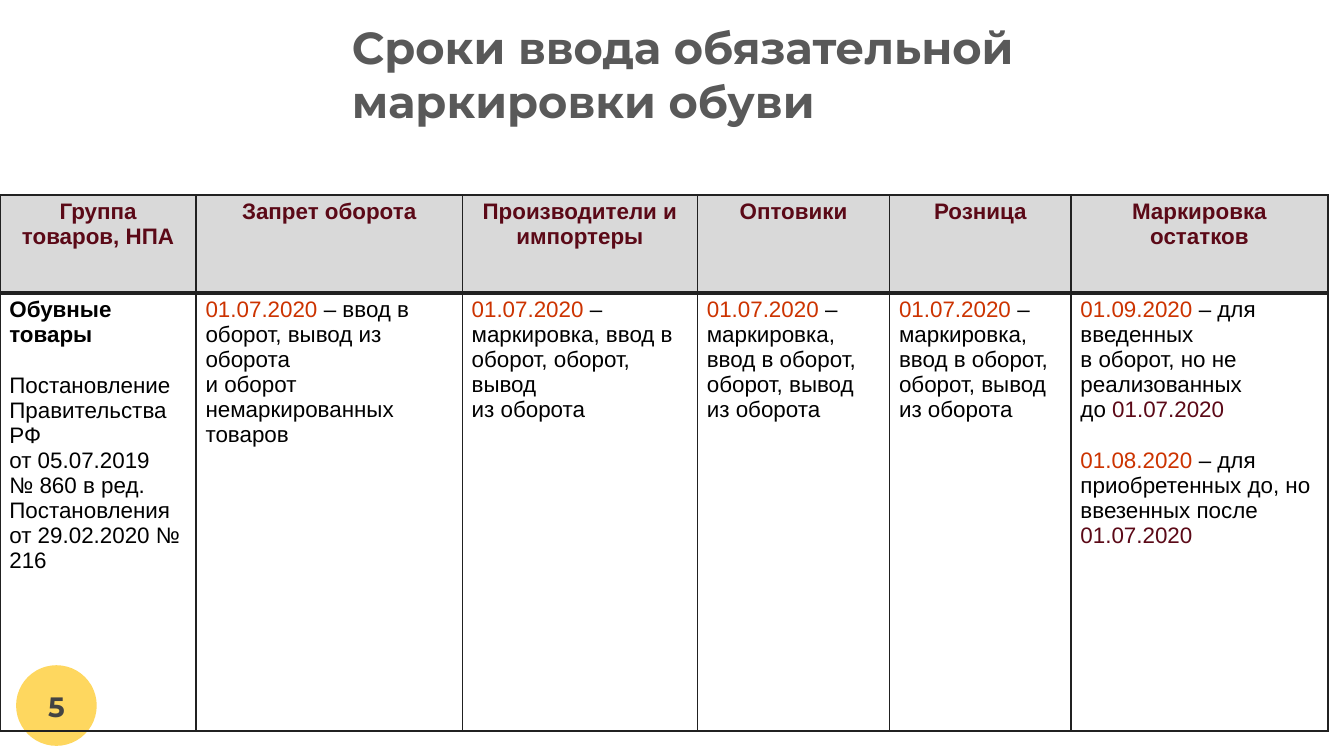
import pptx
import pptx.dml.color
import pptx.enum.shapes
import pptx.enum.text
import pptx.oxml
import pptx.oxml.ns
import pptx.util
from pptx.util import Inches

RGBColor = pptx.dml.color.RGBColor
YELLOW = RGBColor(0xFE, 0xD7, 0x5F)
HEADER_GRAY = RGBColor(0xD9, 0xD9, 0xD9)
TITLE_GRAY = RGBColor(0x59, 0x59, 0x59)
NUMBER_GRAY = RGBColor(0x43, 0x43, 0x43)
BORDER = RGBColor(0x21, 0x21, 0x21)
BURGUNDY = RGBColor(0x5B, 0x09, 0x17)
ORANGE = RGBColor(0xCC, 0x33, 0x00)
BLACK = RGBColor(0, 0, 0)
CENTER = pptx.enum.text.PP_ALIGN.CENTER
LEFT = pptx.enum.text.PP_ALIGN.LEFT
BLANK_LINE = pptx.util.Pt(13.8)


def add_run(paragraph, text, name, size, color, bold):
    run = paragraph.add_run()
    run.text = text
    font_format = {"name": name, "size": pptx.util.Pt(size), "bold": bold}
    for attribute, value in font_format.items():
        setattr(run.font, attribute, value)
    run.font.color.rgb = color


def add_borders(cell, widths):
    properties = cell._tc.get_or_add_tcPr()
    for side, width in widths.items():
        properties.append(pptx.oxml.parse_xml(
            f'<a:{side} {pptx.oxml.ns.nsdecls("a")} w="{pptx.util.Pt(width)}">'
            f'<a:solidFill><a:srgbClr val="{BORDER}"/></a:solidFill></a:{side}>'))


presentation = pptx.Presentation()
presentation.slide_width = Inches(10)
presentation.slide_height = Inches(10) * 9 // 16
slide = presentation.slides.add_slide(presentation.slide_layouts[6])

circle = slide.shapes.add_shape(
    pptx.enum.shapes.MSO_SHAPE.OVAL, Inches(0.12), Inches(4.95), Inches(0.6), Inches(0.6))
circle.shadow.inherit = False
circle.fill.solid()
circle.fill.fore_color.rgb = YELLOW
circle.line.fill.background()

headers = ["Группа товаров, НПА", "Запрет оборота", "Производители и импортеры",
           "Оптовики", "Розница", "Маркировка остатков"]
start = ("01.07.2020", ORANGE)
sales_terms = [
    (0, [start, (" – маркировка, ввод в оборот, оборот, вывод", BLACK)]),
    (0, [("из оборота", BLACK)]),
]
terms = [
    [
        (0, [("Обувные товары", BLACK)]),
        (BLANK_LINE, [("Постановление Правительства РФ", BLACK)]),
        (0, [("от 05.07.2019", BLACK)]),
        (0, [("№ 860 в ред. Постановления от 29.02.2020 № 216", BLACK)]),
    ],
    [
        (0, [start, (" – ввод в оборот, вывод из оборота", BLACK)]),
        (0, [("и оборот немаркированных товаров", BLACK)]),
    ],
    [
        (0, [start, (" –маркировка, ввод в оборот, оборот, вывод", BLACK)]),
        (0, [("из оборота", BLACK)]),
    ],
    sales_terms,
    sales_terms,
    [
        (0, [("01.09.2020", ORANGE), (" – для введенных", BLACK)]),
        (0, [("в оборот, но не реализованных", BLACK)]),
        (0, [("до ", BLACK), ("01.07.2020", BURGUNDY)]),
        (BLANK_LINE, [("01.08.2020 ", ORANGE),
                      ("– для приобретенных до, но ввезенных после ", BLACK),
                      ("01.07.2020", BURGUNDY)]),
    ],
]
rows = [[[(0, [(header, BURGUNDY)])] for header in headers], terms]
column_widths = [1.46, 1.98, 1.75, 1.43, 1.35, 1.91]
row_heights = [0.73, 3.26]

table = slide.shapes.add_table(
    len(rows), len(headers), Inches(0), Inches(1.45),
    Inches(sum(column_widths)), Inches(sum(row_heights))).table
table.first_row = False
table.horz_banding = False
for column, width in zip(table.columns, column_widths):
    column.width = Inches(width)
for row, height in zip(table.rows, row_heights):
    row.height = Inches(height)

cell_format = {"margin_left": Inches(0.07), "margin_right": Inches(0.07),
               "margin_top": Inches(0.03), "margin_bottom": Inches(0.03)}
for row_index, row in enumerate(rows):
    is_header = row_index == 0
    for column_index, content in enumerate(row):
        cell = table.cell(row_index, column_index)
        for attribute, value in cell_format.items():
            setattr(cell, attribute, value)
        add_borders(cell, {"lnL": 1, "lnR": 1, "lnT": 1 if is_header else 2,
                           "lnB": 2 if is_header else 1})
        if is_header:
            cell.fill.solid()
            cell.fill.fore_color.rgb = HEADER_GRAY
        else:
            cell.fill.background()
        for index, (space_before, runs) in enumerate(content):
            frame = cell.text_frame
            paragraph = frame.add_paragraph() if index else frame.paragraphs[0]
            paragraph.alignment = CENTER if is_header else LEFT
            if space_before:
                paragraph.space_before = space_before
            bold = is_header or (column_index == 0 and index == 0)
            for text, color in runs:
                add_run(paragraph, text, "Arial", 12, color, bold)

labels = [
    ("Сроки ввода обязательной маркировки обуви", (2.52, 0.1, 6.73, 0.89),
     0.05, LEFT, 24, TITLE_GRAY),
    ("5", (0.12, 5.04, 0.6, 0.43), 0.1, CENTER, 15, NUMBER_GRAY),
]
for text, box, margin, alignment, size, color in labels:
    frame = slide.shapes.add_textbox(*map(Inches, box)).text_frame
    frame_format = {"word_wrap": True,
                    "vertical_anchor": pptx.enum.text.MSO_ANCHOR.MIDDLE,
                    "margin_left": Inches(0.1), "margin_right": Inches(0.1),
                    "margin_top": Inches(margin), "margin_bottom": Inches(margin)}
    for attribute, value in frame_format.items():
        setattr(frame, attribute, value)
    frame.paragraphs[0].alignment = alignment
    add_run(frame.paragraphs[0], text, "Montserrat", size, color, True)

presentation.save("out.pptx")
